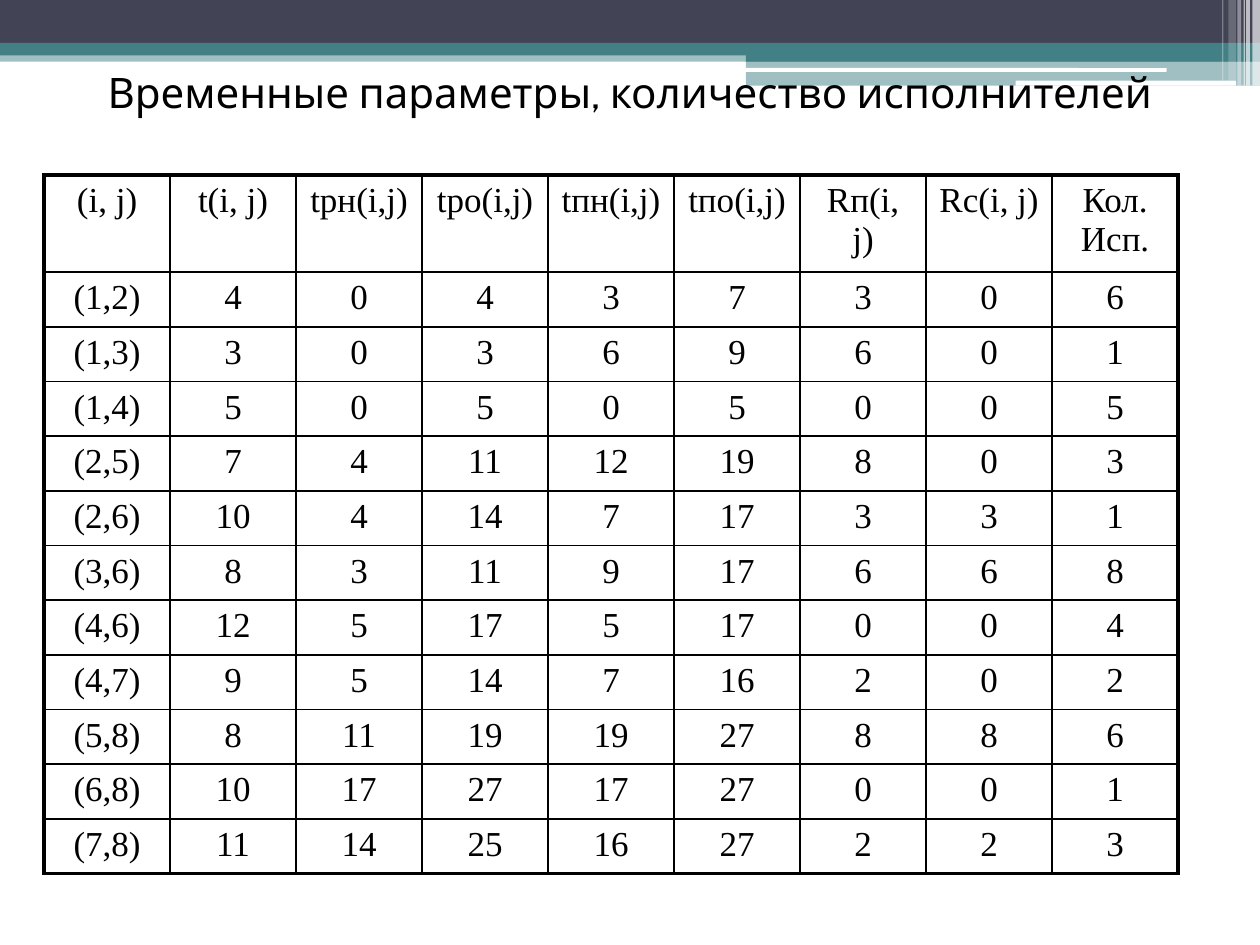
from dataclasses import dataclass

from lxml import etree
from pptx import Presentation
from pptx.dml.color import RGBColor
from pptx.enum.shapes import MSO_SHAPE
from pptx.enum.text import MSO_ANCHOR, PP_ALIGN
from pptx.oxml.ns import qn
from pptx.util import Inches, Pt

RECT = MSO_SHAPE.RECTANGLE
ROUND = MSO_SHAPE.ROUNDED_RECTANGLE
CENTER = PP_ALIGN.CENTER
MIDDLE = MSO_ANCHOR.MIDDLE


@dataclass(frozen=True)
class Theme:
    dark: str = "424456"
    teal: str = "438086"
    white: str = "FFFFFF"
    ink: str = "000000"
    title_font: str = "Cabin"
    table_font: str = "Times New Roman"
    title_size: int = 24
    table_size: int = 20
    outer_line: float = 2.25
    inner_line: float = 1


THEME = Theme()

TITLE = "Временные параметры, количество исполнителей"
HEADER = ["(i, j)", "t(i, j)", "tрн(i,j)", "tрo(i,j)", "tпн(i,j)", "tпo(i,j)",
          "Rп(i, j)", "Rс(i, j)", "Кол. Исп."]
WORKS = [
    ("(1,2)", 4, 0, 4, 3, 7, 3, 0, 6),
    ("(1,3)", 3, 0, 3, 6, 9, 6, 0, 1),
    ("(1,4)", 5, 0, 5, 0, 5, 0, 0, 5),
    ("(2,5)", 7, 4, 11, 12, 19, 8, 0, 3),
    ("(2,6)", 10, 4, 14, 7, 17, 3, 3, 1),
    ("(3,6)", 8, 3, 11, 9, 17, 6, 6, 8),
    ("(4,6)", 12, 5, 17, 5, 17, 0, 0, 4),
    ("(4,7)", 9, 5, 14, 7, 16, 2, 0, 2),
    ("(5,8)", 8, 11, 19, 19, 27, 8, 8, 6),
    ("(6,8)", 10, 17, 27, 17, 27, 0, 0, 1),
    ("(7,8)", 11, 14, 25, 16, 27, 2, 2, 3),
]

# Header decoration, back to front: shape, (left, top, width, height), colour, opacity %
BANDS = [
    (RECT, (0, 0.4, 10, 0.09), THEME.teal, 50),
    (RECT, (0, 0, 10, 0.34), THEME.dark, 100),
    (RECT, (0, 0.34, 10, 0.1), THEME.teal, 100),
    (RECT, (5.92, 0.39, 4.08, 0.1), THEME.teal, 100),
    (RECT, (5.92, 0.48, 4.08, 0.2), THEME.teal, 50),
    (ROUND, (5.91, 0.54, 3.35, 0.03), THEME.white, 100),
    (ROUND, (8.06, 0.64, 1.75, 0.04), THEME.white, 100),
    (RECT, (9.94, 0, 0.06, 0.68), THEME.white, 65),
    (RECT, (9.89, 0, 0.03, 0.68), THEME.white, 65),
    (RECT, (9.87, 0, 0.01, 0.68), THEME.white, 60),
    (RECT, (9.82, 0, 0.03, 0.68), THEME.white, 40),
    (RECT, (9.75, 0, 0.06, 0.64), THEME.white, 20),
    (RECT, (9.7, 0, 0.01, 0.64), THEME.white, 30),
]

TITLE_BOX = (0.5, 0.3, 9, 0.85)
TABLE_LEFT, TABLE_TOP = 0.35, 1.39
COLUMN_WIDTH, HEADER_HEIGHT, ROW_HEIGHT = 1, 0.77, 0.43


def add_band(page, kind, place, color, opacity):
    band = page.shapes.add_shape(kind, *map(Inches, place))
    band.shadow.inherit = False
    band.line.fill.background()
    band.fill.solid()
    band.fill.fore_color.rgb = RGBColor.from_string(color)
    if opacity < 100:
        color_xml = band._element.spPr.find(qn("a:solidFill"))[0]
        etree.SubElement(color_xml, qn("a:alpha"), val=str(opacity * 1000))


def style_paragraph(para, font, size):
    para.alignment = CENTER
    para.font.name = font
    para.font.size = Pt(size)
    para.font.color.rgb = RGBColor.from_string(THEME.ink)


def add_title(page):
    box = page.shapes.add_textbox(*map(Inches, TITLE_BOX))
    frame = box.text_frame
    frame.word_wrap = True
    frame.vertical_anchor = MIDDLE
    frame.text = TITLE
    style_paragraph(frame.paragraphs[0], THEME.title_font, THEME.title_size)


def set_borders(cell, outer_sides):
    """Draw all four sides of a cell, the heavier line on the table's edge."""
    props = cell._tc.get_or_add_tcPr()
    for index, (side, is_outer) in enumerate(outer_sides.items()):
        width = THEME.outer_line if is_outer else THEME.inner_line
        line = etree.Element(qn(f"a:ln{side}"), w=str(Pt(width)))
        fill = etree.SubElement(line, qn("a:solidFill"))
        etree.SubElement(fill, qn("a:srgbClr"), val=THEME.ink)
        props.insert(index, line)


def add_works_table(page):
    rows = [HEADER, *WORKS]
    heights = [HEADER_HEIGHT] + [ROW_HEIGHT] * len(WORKS)
    last_row, last_column = len(rows) - 1, len(HEADER) - 1
    table = page.shapes.add_table(
        len(rows), len(HEADER), Inches(TABLE_LEFT), Inches(TABLE_TOP),
        Inches(COLUMN_WIDTH * len(HEADER)), Inches(sum(heights))).table
    table.first_row = table.horz_banding = False
    for column in table.columns:
        column.width = Inches(COLUMN_WIDTH)
    for r, (values, height) in enumerate(zip(rows, heights)):
        table.rows[r].height = Inches(height)
        for c, value in enumerate(values):
            cell = table.cell(r, c)
            cell.text = str(value)
            cell.fill.background()
            style_paragraph(cell.text_frame.paragraphs[0],
                            THEME.table_font, THEME.table_size)
            set_borders(cell, {"L": c == 0, "R": c == last_column,
                               "T": r == 0, "B": r == last_row})


def main():
    deck = Presentation()
    deck.slide_width, deck.slide_height = Inches(10), Inches(7.5)
    page = deck.slides.add_slide(deck.slide_layouts[6])
    for band in BANDS:
        add_band(page, *band)
    add_title(page)
    add_works_table(page)
    deck.save("out.pptx")


if __name__ == "__main__":
    main()
